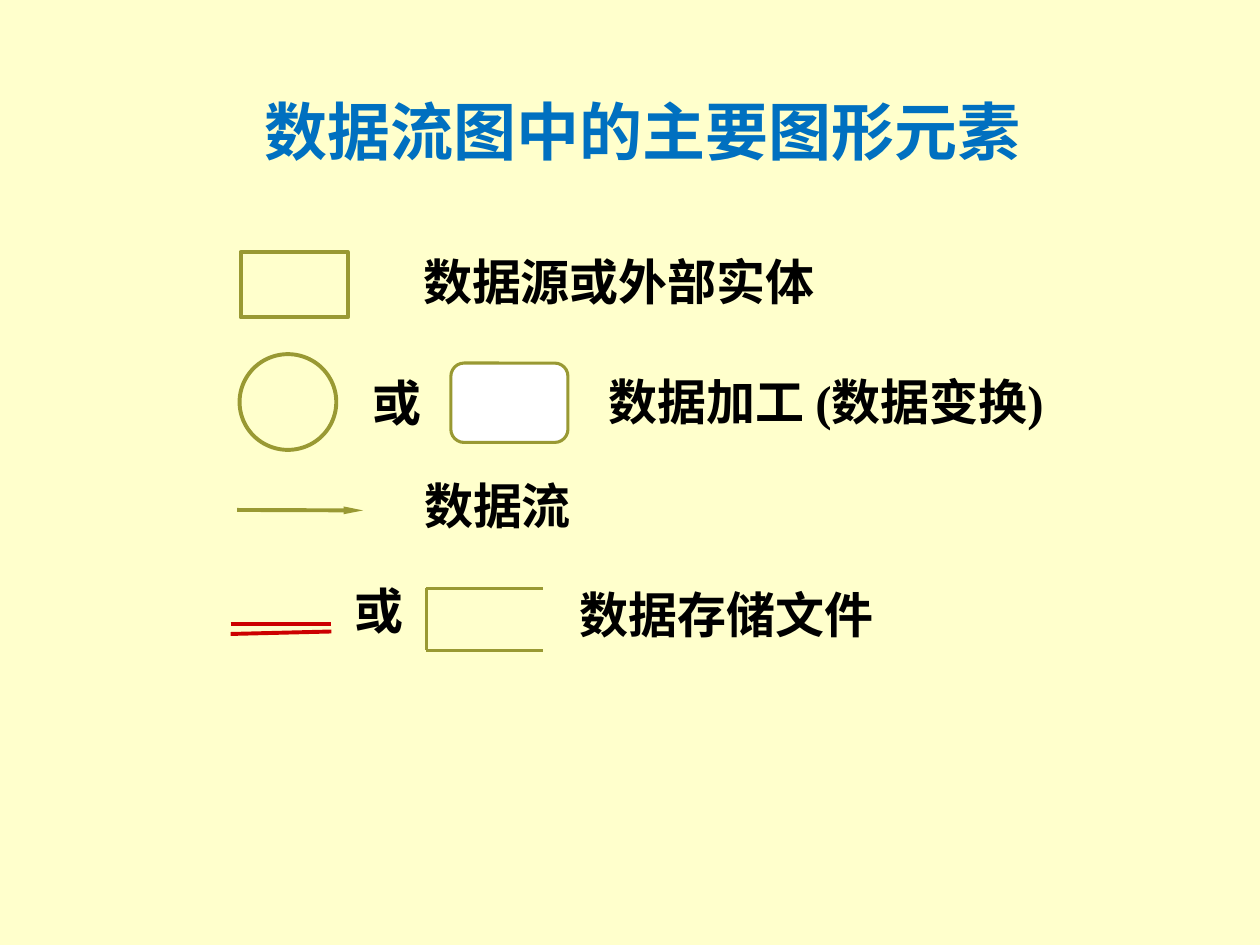
from pptx import Presentation
from pptx.dml.color import RGBColor
from pptx.enum.shapes import MSO_CONNECTOR, MSO_SHAPE
from pptx.enum.text import MSO_ANCHOR, MSO_AUTO_SIZE, PP_ALIGN
from pptx.oxml.ns import qn
from pptx.util import Cm, Pt
from lxml.etree import SubElement

OLIVE, RED, BLUE, BLACK = "999933", "CC0000", "0070C0", "000000"
CJK_FONT = "Noto Sans CJK SC"


def rgb(value):
    return RGBColor.from_string(value)


class SymbolSlide:
    """Holds the text style and the current slide."""

    label_font = {"name": "Times New Roman", "size": Pt(28), "bold": True}
    title_font = {"name": CJK_FONT, "size": Pt(36), "bold": True}
    label_height = 1.45

    def __init__(self, prs, background):
        self.s = prs.slides.add_slide(prs.slide_layouts[5])
        fill = self.s.background.fill
        fill.solid()
        fill.fore_color.rgb = rgb(background)

    def set_text(self, tf, text, font, color, align):
        p = tf.paragraphs[0]
        p.alignment = align
        r = p.add_run()
        r.text = text
        for key, value in font.items():
            setattr(r.font, key, value)
        r.font.color.rgb = rgb(color)
        SubElement(r.font._element, qn("a:ea")).set("typeface", CJK_FONT)

    def title(self, text, *box):
        sp = self.s.shapes.title
        sp.left, sp.top, sp.width, sp.height = map(Cm, box)
        sp.text_frame.vertical_anchor = MSO_ANCHOR.MIDDLE
        self.set_text(sp.text_frame, text, self.title_font, BLUE, PP_ALIGN.CENTER)

    def label(self, text, x, y, width, align=PP_ALIGN.RIGHT, wrap=False):
        sp = self.s.shapes.add_textbox(Cm(x), Cm(y), Cm(width), Cm(self.label_height))
        tf = sp.text_frame
        tf.word_wrap = wrap
        tf.auto_size = MSO_AUTO_SIZE.SHAPE_TO_FIT_TEXT
        self.set_text(tf, text, self.label_font, BLACK, align)

    def symbol(self, kind, *box, fill=None, weight=2.25):
        sp = self.s.shapes.add_shape(kind, *map(Cm, box))
        sp.shadow.inherit = False
        if fill:
            sp.fill.solid()
            sp.fill.fore_color.rgb = rgb(fill)
        else:
            sp.fill.background()
        sp.line.color.rgb = rgb(OLIVE)
        sp.line.width = Pt(weight)

    def line(self, *ends, color=OLIVE, weight=2.25, arrow=False):
        cx = self.s.shapes.add_connector(MSO_CONNECTOR.STRAIGHT, *map(Cm, ends))
        cx.line.color.rgb = rgb(color)
        cx.line.width = Pt(weight)
        if arrow:
            head = SubElement(cx.get_or_add_ln(), qn("a:tailEnd"))
            for key, value in {"type": "triangle", "w": "sm", "len": "lg"}.items():
                head.set(key, value)
        SubElement(cx._element.spPr, qn("a:effectLst"))


def main():
    prs = Presentation()
    prs.slide_width, prs.slide_height = Cm(25.4), Cm(19.05)
    page = SymbolSlide(prs, "FFFFCC")
    page.title("数据流图中的主要图形元素", 2.16, 1.73, 21.59, 1.8)

    # Data source or external entity
    page.symbol(MSO_SHAPE.RECTANGLE, 4.85, 5.08, 2.16, 1.32)
    page.label("数据源或外部实体", 8.28, 4.95, 12.22, PP_ALIGN.LEFT, wrap=True)

    # Process: circle or rounded box
    page.symbol(MSO_SHAPE.OVAL, 4.83, 7.14, 1.95, 1.93)
    page.label("或", 7.24, 7.39, 1.5)
    page.symbol(MSO_SHAPE.FLOWCHART_ALTERNATE_PROCESS, 9.09, 7.32, 2.36, 1.6,
                fill="FFFFFF", weight=1.75)
    page.label("数据加工 (数据变换)", 11.94, 7.37, 9.35, wrap=True)

    # Data flow
    page.line(4.78, 10.28, 7.32, 10.29, arrow=True)
    page.label("数据流", 8.28, 9.47, 3.48)

    # Data store: double line or open box
    for start_y, end_y in ((12.57, 12.57), (12.78, 12.73)):
        page.line(4.65, start_y, 6.68, end_y, color=RED)
    page.label("或", 6.88, 11.58, 1.5)
    left, right, top, bottom = 8.59, 10.95, 11.86, 13.11
    for ends in ((left, bottom, right, bottom),
                 (left, top, right, top),
                 (left, top, left, bottom)):
        page.line(*ends, weight=1.75)
    page.label("数据存储文件", 11.38, 11.66, 6.48)

    prs.save("out.pptx")


if __name__ == "__main__":
    main()
